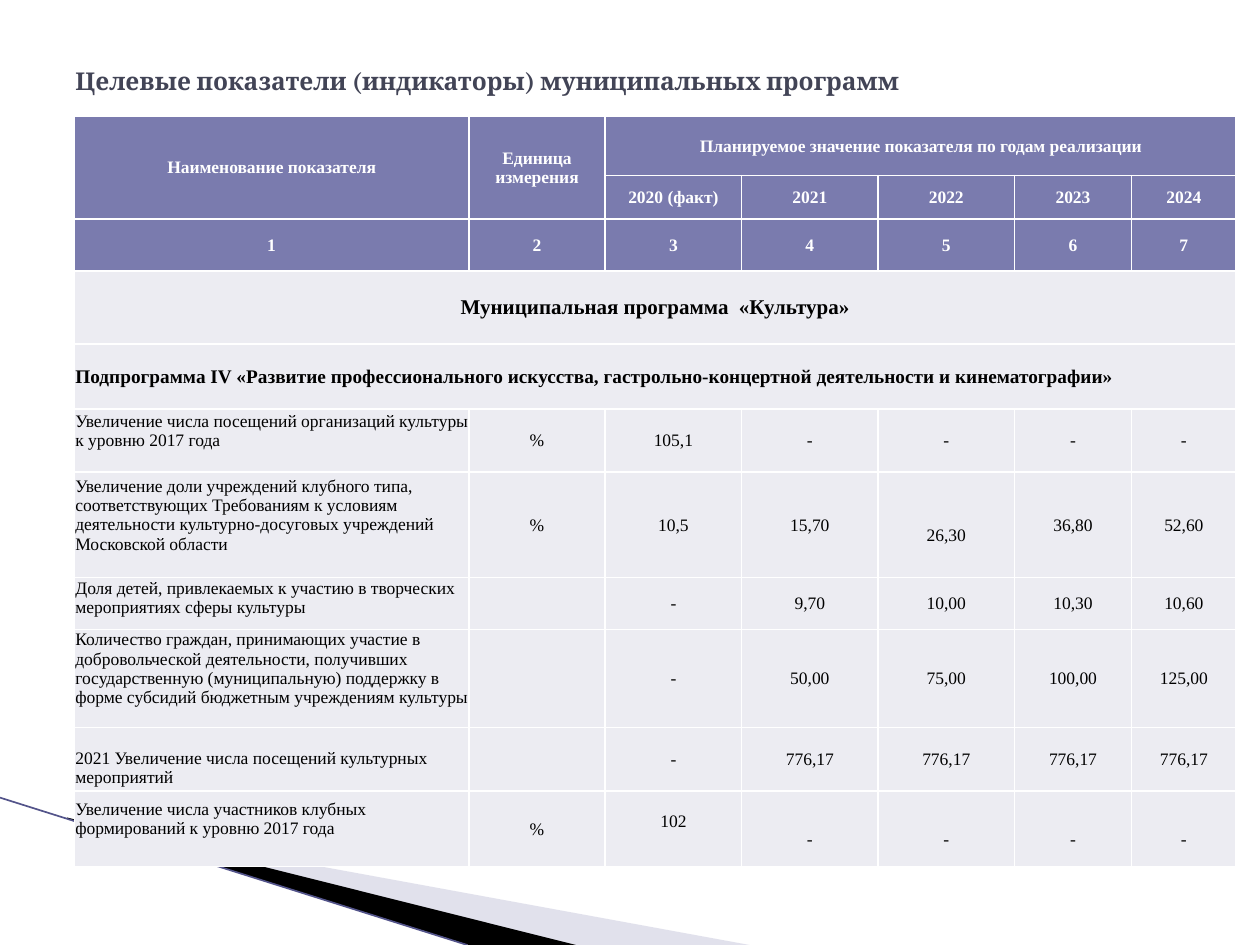
from dataclasses import dataclass

from lxml.etree import SubElement
from pptx import Presentation
from pptx.dml.color import RGBColor
from pptx.enum.shapes import MSO_CONNECTOR as Conn
from pptx.enum.text import MSO_ANCHOR as Anchor, PP_ALIGN as Align
from pptx.oxml.ns import qn
from pptx.util import Cm, Pt

COLORS = {"title": "424456", "head": "7A7BAE", "body": "ECECF2", "white": "FFFFFF",
          "black": "000000", "wedge": "B6B6D1", "stripe": "53548A"}
COL_WIDTHS = [7.95, 2.75, 2.75, 2.75, 2.75, 2.36, 2.11]
ROW_HEIGHTS = [1.2, 0.87, 1.05, 1.47, 1.31, 1.21, 1.97, 1.04, 1.98, 1.19, 1.52]
INSET = 0.02
LINE = 0.41
HEAD_ROWS = 3


@dataclass
class Style:
    size: float = 10
    color: str = "black"
    bold: bool = False
    font: str = "Times New Roman"


@dataclass
class Entry:
    text: str
    style: Style
    align: Align = Align.CENTER
    anchor: Anchor = Anchor.MIDDLE
    above: float = 0
    below: float = 0
    rows: int = 1
    cols: int = 1


@dataclass
class Wedge:
    points: list[tuple[float, float]]
    color: str
    opacity: int = 100


HEAD = Style(color="white", bold=True)
BODY = Style()


def head(text: str, rows: int = 1, cols: int = 1) -> Entry:
    """Return a table heading entry."""
    return Entry(text, HEAD, rows=rows, cols=cols)


def band(text: str, size: float, align: Align) -> Entry:
    """Return a bold entry across the whole table."""
    return Entry(text, Style(size, bold=True), align, cols=len(COL_WIDTHS))


def name(text: str, anchor: Anchor = Anchor.MIDDLE, above: float = 0, below: float = 0) -> Entry:
    """Return an indicator name entry."""
    return Entry(text, BODY, Align.LEFT, anchor, above, below)


def values(*texts: str) -> list[Entry]:
    """Return centred value entries."""
    return [Entry(text, BODY) for text in texts]


def lowered(text: str, anchor: Anchor = Anchor.MIDDLE) -> Entry:
    """Return a value entry pushed down by one line."""
    return Entry(text, BODY, anchor=anchor, above=LINE)


ROWS = [
    [head("Наименование показателя", rows=2), head("Единица измерения", rows=2),
     head("Планируемое значение показателя по годам реализации", cols=5)],
    [None, None] + [head(t) for t in ("2020 (факт)", "2021", "2022", "2023", "2024")],
    [head(str(n + 1)) for n in range(len(COL_WIDTHS))],
    [band("Муниципальная программа  «Культура»", 12, Align.CENTER)],
    [band("Подпрограмма IV «Развитие профессионального искусства, "
          "гастрольно-концертной деятельности и кинематографии»", 11, Align.LEFT)],
    [name("Увеличение числа посещений организаций культуры к уровню 2017 года", below=LINE),
     *values("%", "105,1", "-", "-", "-", "-")],
    [name("Увеличение доли учреждений клубного типа, соответствующих Требованиям к условиям "
          "деятельности культурно-досуговых учреждений Московской области", below=LINE),
     *values("%", "10,5", "15,70"), lowered("26,30"), *values("36,80", "52,60")],
    [name("Доля детей, привлекаемых к участию в творческих мероприятиях сферы культуры", Anchor.TOP),
     None, *values("-", "9,70", "10,00", "10,30", "10,60")],
    [name("Количество граждан, принимающих участие в добровольческой деятельности, получивших "
          "государственную (муниципальную) поддержку в форме субсидий бюджетным учреждениям культуры",
          Anchor.TOP),
     None, *values("-", "50,00", "75,00", "100,00", "125,00")],
    [name("2021 Увеличение числа посещений культурных мероприятий", Anchor.TOP, above=LINE),
     None, *values("-", *["776,17"] * 4)],
    [name("Увеличение числа участников клубных формирований к уровню 2017 года", below=LINE),
     *values("%"), lowered("102", Anchor.TOP), *[lowered("-") for _ in range(4)]],
]

WEDGES = [
    Wedge([(1.4, 16.54), (15.11, 19.05), (11.58, 19.05), (1.4, 16.51)], "wedge", 40),
    Wedge([(1.35, 16.48), (11.61, 19.05), (9.45, 19.05), (1.37, 16.51)], "black"),
]


def rgb(key: str) -> RGBColor:
    """Return a named colour."""
    return RGBColor.from_string(COLORS[key])


def write(tf, text: str, style: Style, align: Align = Align.LEFT) -> None:
    """Add one styled run to the first paragraph of a text frame."""
    p = tf.paragraphs[0]
    p.alignment = align
    r = p.add_run()
    r.text = text
    r.font.name, r.font.size, r.font.bold = style.font, Pt(style.size), style.bold
    r.font.color.rgb = rgb(style.color)


def draw_wedge(s, wedge: Wedge) -> None:
    """Draw a filled corner wedge."""
    points = [(Cm(x), Cm(y)) for x, y in wedge.points]
    fb = s.shapes.build_freeform(*points[0], scale=1.0)
    fb.add_line_segments(points[1:], close=True)
    sp = fb.convert_to_shape()
    sp.shadow.inherit = False
    sp.line.fill.background()
    sp.fill.solid()
    sp.fill.fore_color.rgb = rgb(wedge.color)
    if wedge.opacity < 100:
        clr = sp.fill._xPr.find(qn("a:solidFill"))[0]
        SubElement(clr, qn("a:alpha")).set("val", str(wedge.opacity * 1000))


def draw_stripe(s) -> None:
    """Draw the slanted corner line."""
    cn = s.shapes.add_connector(Conn.STRAIGHT, Cm(0), Cm(16.08), Cm(9.42), Cm(19.05))
    cn.line.color.rgb = rgb("stripe")
    cn.line.width = Pt(0.95)
    SubElement(cn._element.spPr, qn("a:effectLst"))


def dress_cell(cell, fill: str) -> None:
    """Give a cell white borders, narrow margins and a fill."""
    tcPr = cell._tc.get_or_add_tcPr()
    for side in "LRTB":
        ln = SubElement(tcPr, qn(f"a:ln{side}"), w=str(Pt(1)))
        SubElement(SubElement(ln, qn("a:solidFill")), qn("a:srgbClr"), val=COLORS["white"])
    cell.fill.solid()
    cell.fill.fore_color.rgb = rgb(fill)
    cell.margin_left = cell.margin_right = cell.margin_top = Cm(INSET)
    cell.margin_bottom = 0


def draw_table(s) -> None:
    """Draw the table of indicators."""
    tbl = s.shapes.add_table(len(ROWS), len(COL_WIDTHS), Cm(1.5), Cm(2.34),
                             Cm(sum(COL_WIDTHS)), Cm(sum(ROW_HEIGHTS))).table
    tbl.first_row = tbl.horz_banding = False
    for col, width in zip(tbl.columns, COL_WIDTHS):
        col.width = Cm(width)
    for i, (row, height) in enumerate(zip(tbl.rows, ROW_HEIGHTS)):
        row.height = Cm(height)
        for cell in row.cells:
            dress_cell(cell, "head" if i < HEAD_ROWS else "body")
    for i, entries in enumerate(ROWS):
        for j, e in enumerate(entries):
            if e is None:
                continue
            cell = tbl.cell(i, j)
            if e.rows * e.cols > 1:
                cell.merge(tbl.cell(i + e.rows - 1, j + e.cols - 1))
            cell.vertical_anchor = e.anchor
            cell.margin_top, cell.margin_bottom = Cm(INSET + e.above), Cm(e.below)
            write(cell.text_frame, e.text, e.style, e.align)


def main() -> None:
    """Build the slide and save it."""
    prs = Presentation()
    prs.slide_width, prs.slide_height = Cm(25.4), Cm(19.05)
    s = prs.slides.add_slide(prs.slide_layouts[6])
    for wedge in WEDGES:
        draw_wedge(s, wedge)
    draw_stripe(s)
    tf = s.shapes.add_textbox(Cm(1.27), Cm(0.76), Cm(22.86), Cm(1.75)).text_frame
    tf.word_wrap = True
    tf.vertical_anchor = Anchor.MIDDLE
    write(tf, "Целевые показатели (индикаторы) муниципальных программ",
          Style(14, "title", True, "Cambria"))
    draw_table(s)
    prs.save("out.pptx")


if __name__ == "__main__":
    main()
